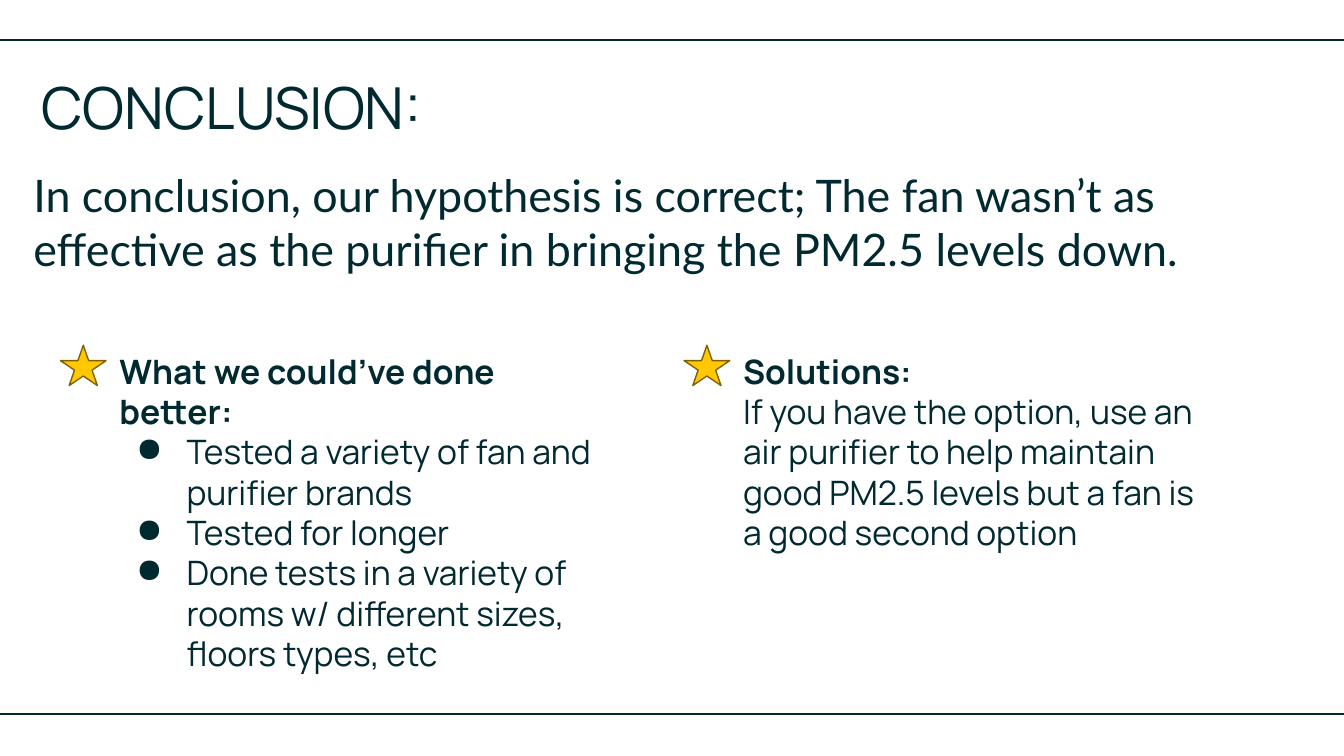
"""Build the conclusion slide of an air purifier experiment."""
from lxml.etree import SubElement
from pptx import Presentation
from pptx.dml.color import RGBColor
from pptx.enum.shapes import MSO_CONNECTOR, MSO_SHAPE
from pptx.enum.text import MSO_ANCHOR, MSO_AUTO_SIZE, PP_ALIGN
from pptx.oxml.ns import qn
from pptx.util import Pt

INK = RGBColor(0x00, 0x29, 0x30)
GOLD = RGBColor(0xFF, 0xC8, 0x00)
BROWN = RGBColor(0x7F, 0x60, 0x00)
WIDTH, HEIGHT = 720, 405
STAR_W, STAR_H = 24.5, 21.6
FRAME = {"word_wrap": True, "auto_size": MSO_AUTO_SIZE.NONE,
         "vertical_anchor": MSO_ANCHOR.TOP,
         "margin_left": Pt(7.2), "margin_right": Pt(7.2),
         "margin_top": Pt(7.2), "margin_bottom": Pt(7.2)}
TITLE = {"name": "Manrope", "size": Pt(31), "bold": False}
SUMMARY = {"name": "Lato", "size": Pt(24), "bold": False}
HEADING = {"name": "Manrope", "size": Pt(18), "bold": True}
BODY = {**HEADING, "bold": False}


def set_attrs(obj, values):
    """Set every attribute in values on obj."""
    for name, value in values.items():
        setattr(obj, name, value)


def place(sp, left, top, width, height):
    """Move and size a shape, in points."""
    set_attrs(sp, {"left": Pt(left), "top": Pt(top),
                   "width": Pt(width), "height": Pt(height)})


def add_bullet(p):
    """Give a paragraph a hanging round bullet in the text colour."""
    pPr = p._p.get_or_add_pPr()
    pPr.set("marL", str(Pt(36)))
    pPr.set("indent", str(Pt(-27)))
    color = SubElement(pPr, qn("a:buClr"))
    SubElement(color, qn("a:srgbClr"), val=str(INK))
    SubElement(pPr, qn("a:buChar"), char="●")


def write(tf, items):
    """Fill a text frame with (text, font format, bulleted) paragraphs."""
    set_attrs(tf, FRAME)
    for i, (text, font, bulleted) in enumerate(items):
        p = tf.add_paragraph() if i else tf.paragraphs[0]
        p.alignment = PP_ALIGN.LEFT
        if bulleted:
            add_bullet(p)
        r = p.add_run()
        r.text = text
        set_attrs(r.font, font)
        r.font.color.rgb = INK


def add_title(s, text):
    """Format the title placeholder."""
    place(s.shapes.title, 15.1, 31, 236, 52)
    write(s.shapes.title.text_frame, [(text, TITLE, False)])


def add_text(s, box, items):
    """Add a text box."""
    sp = s.shapes.add_textbox(*map(Pt, box))
    write(sp.text_frame, items)


def add_rule(s, y):
    """Add a thin line across the slide."""
    cx = s.shapes.add_connector(MSO_CONNECTOR.STRAIGHT, 0, Pt(y), Pt(WIDTH), Pt(y))
    cx.line.color.rgb = INK
    cx.line.width = Pt(0.75)
    SubElement(cx._element.spPr, qn("a:effectLst"))


def add_star(s, left, top):
    """Add a gold star."""
    sp = s.shapes.add_shape(MSO_SHAPE.STAR_5_POINT, Pt(left), Pt(top),
                            Pt(STAR_W), Pt(STAR_H))
    sp.shadow.inherit = False
    sp.fill.solid()
    sp.fill.fore_color.rgb = GOLD
    sp.line.color.rgb = BROWN
    sp.line.width = Pt(0.75)


def add_column(s, left, width, height, heading, body, bulleted):
    """Add a headed text column with a star at its left."""
    items = [(heading, HEADING, False)] + [(text, BODY, bulleted) for text in body]
    add_text(s, (left, 180.7, width, height), items)
    add_star(s, left - STAR_W, 185)


def main():
    """Build and save the slide."""
    prs = Presentation()
    prs.slide_width, prs.slide_height = Pt(WIDTH), Pt(HEIGHT)
    s = prs.slides.add_slide(prs.slide_layouts[5])
    for y in (21.5, 382.5):
        add_rule(s, y)
    add_title(s, "CONCLUSION:")
    add_text(s, (10.8, 82.8, 698.4, 102.2), [(
        "In conclusion, our hypothesis is correct; The fan wasn’t as effective "
        "as the purifier in bringing the PM2.5 levels down.", SUMMARY, False)])
    add_column(s, 56.9, 276.5, 155.5, "What we could’ve done better:", [
        "Tested a variety of fan and purifier brands",
        "Tested for longer",
        "Done tests in a variety of rooms w/ different sizes, floors types, etc",
    ], True)
    add_column(s, 391, 262, 181.4, "Solutions:", [
        "If you have the option, use an air purifier to help maintain good "
        "PM2.5 levels but a fan is a good second option",
    ], False)
    prs.save("out.pptx")


if __name__ == "__main__":
    main()
